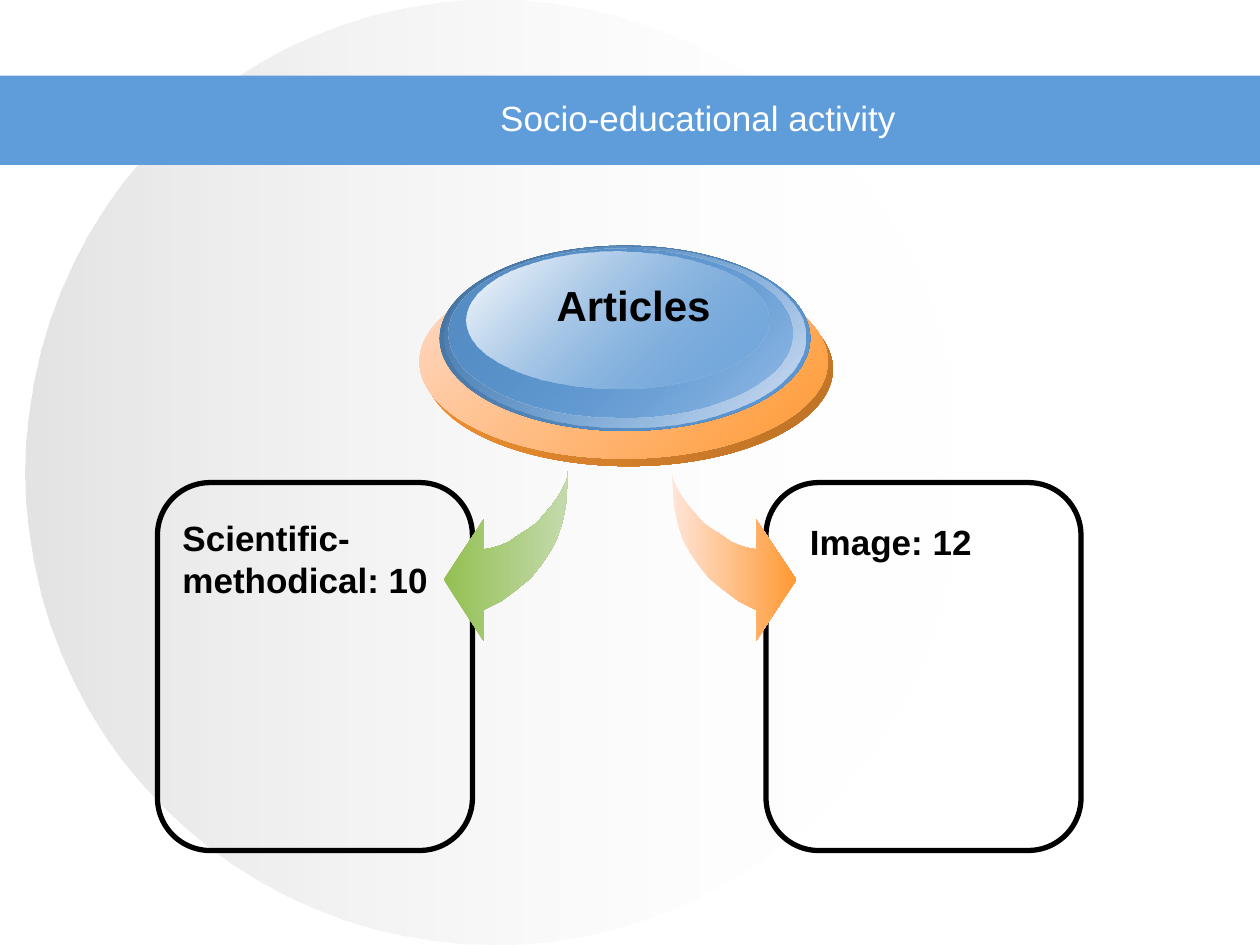
from lxml.etree import SubElement
from pptx import Presentation
from pptx.dml.color import RGBColor
from pptx.enum.shapes import MSO_SHAPE
from pptx.enum.text import MSO_ANCHOR, PP_ALIGN
from pptx.oxml.ns import qn
from pptx.util import Inches, Pt

BLUE, ORANGE, BLACK, WHITE = "5E9CDA", "FF9933", "000000", "FFFFFF"
HEADING = {"name": "Arial", "size": Pt(20), "bold": False}
LABEL = {**HEADING, "bold": True}
HUB_LABEL = {**LABEL, "size": Pt(24)}

ARROW_CURVE = [
    (0, 0), (0.01, 0.15), (0.02, 0.29), (0.05, 0.43), (0.09, 0.55),
    (0.15, 0.66), (0.22, 0.76), (0.3, 0.86), (0.41, 0.95), (0.53, 1.04),
    (0.67, 1.11), (0.67, 1.36), (0.99, 0.87), (0.67, 0.39), (0.67, 0.63),
    (0.61, 0.62), (0.54, 0.6), (0.47, 0.57), (0.4, 0.52), (0.32, 0.47),
    (0.25, 0.42), (0.19, 0.35), (0.13, 0.28), (0.08, 0.21), (0.04, 0.14),
    (0.01, 0.07),
]

HUB_RINGS = [
    ((3.37, 2.16, 3.24, 1.54), (ORANGE, 100), ("BA7025", 100)),
    ((3.33, 2.1, 3.24, 1.54), ("FFDAC7", 100), (ORANGE, 100)),
    ((3.49, 1.95, 2.94, 1.47), ("43709C", 100), (BLUE, 100)),
    ((3.53, 1.96, 2.86, 1.43), (BLUE, 0), ("D8E3F3", 100)),
    ((3.56, 1.97, 2.73, 1.34), ("558DC5", 100), (BLUE, 48)),
    ((3.7, 2, 2.4, 1.08), (WHITE, 100), (BLUE, 38)),
]


def color(value):
    """Turn a hex string into a colour."""
    return RGBColor.from_string(value)


def add_box(page, kind, box):
    """Add a preset shape without shadow or line."""
    shape = page.shapes.add_shape(kind, *map(Inches, box))
    shape.shadow.inherit = False
    shape.line.fill.background()
    return shape


def fill_gradient(shape, start, end, angle=0):
    """Fill with two (colour, opacity) stops at a clockwise angle."""
    shape.fill.gradient()
    shape.fill.gradient_angle = -angle % 360
    for stop, position, (value, opacity) in zip(shape.fill.gradient_stops, (0, 1), (start, end)):
        stop.position = position
        stop.color.rgb = color(value)
    tones = shape.fill._xPr.iter(qn("a:srgbClr"))
    for tone, (_, opacity) in zip(list(tones), (start, end)):
        if opacity < 100:
            SubElement(tone, qn("a:alpha"), val=str(opacity * 1000))


def add_text(page, box, text, style, tint=BLACK, align=PP_ALIGN.LEFT, anchor=MSO_ANCHOR.TOP):
    """Add one paragraph of wrapped text."""
    frame = page.shapes.add_textbox(*map(Inches, box)).text_frame
    frame.word_wrap = True
    frame.vertical_anchor = anchor
    para = frame.paragraphs[0]
    para.alignment = align
    span = para.add_run()
    span.text = text
    for name, value in style.items():
        setattr(span.font, name, value)
    span.font.color.rgb = color(tint)


def add_backdrop(page, box):
    """Add the large fading disc."""
    disc = add_box(page, MSO_SHAPE.OVAL, box)
    fill_gradient(disc, ("C0C0C0", 44), (WHITE, 0))


def add_title_band(page, box, text):
    """Add the title band and its heading."""
    band = add_box(page, MSO_SHAPE.RECTANGLE, box)
    band.fill.solid()
    band.fill.fore_color.rgb = color(BLUE)
    left, top, _, _ = box
    add_text(page, (left + 2.25, top + 0.07, 6.58, 0.53), text, HEADING, WHITE,
             PP_ALIGN.CENTER, MSO_ANCHOR.MIDDLE)


def add_panel(page, box, text, text_box):
    """Add an outlined rounded panel with its label."""
    panel = add_box(page, MSO_SHAPE.ROUNDED_RECTANGLE, box)
    panel.adjustments[0] = 0.167
    panel.fill.background()
    panel.line.color.rgb = color(BLACK)
    panel.line.width = Pt(3)
    add_text(page, text_box, text, LABEL)


def add_arrow(page, left, top, direction, start, end):
    """Add a curved arrow from its tail, right (1) or left (-1)."""
    points = [(Inches(left + direction * x), Inches(top + y)) for x, y in ARROW_CURVE]
    builder = page.shapes.build_freeform(*points[0])
    builder.add_line_segments(points[1:], close=True)
    arrow = builder.convert_to_shape()
    arrow.shadow.inherit = False
    arrow.line.fill.background()
    fill_gradient(arrow, (start, 100), (end, 100))


def add_hub(page, text, text_box):
    """Add the stacked ellipses with the topic."""
    for box, start, end in HUB_RINGS:
        fill_gradient(add_box(page, MSO_SHAPE.OVAL, box), start, end, 45)
    add_text(page, text_box, text, HUB_LABEL, align=PP_ALIGN.CENTER)


def main():
    """Build the slide and save it."""
    deck = Presentation()
    deck.slide_width, deck.slide_height = Inches(10), Inches(7.5)
    page = deck.slides.add_slide(deck.slide_layouts[6])
    add_backdrop(page, (0.2, 0, 7.44, 7.5))
    add_title_band(page, (0, 0.6, 10, 0.71), "Socio-educational activity")
    add_panel(page, (6.08, 3.83, 2.5, 2.92), "Image: 12", (6.33, 4.08, 2.23, 0.44))
    add_panel(page, (1.25, 3.83, 2.5, 2.92), "Scientific-methodical: 10",
              (1.35, 4.05, 2.4, 0.77))
    add_arrow(page, 4.51, 3.73, -1, "93C052", "C4DAAD")
    add_arrow(page, 5.33, 3.73, 1, "FFE5D9", ORANGE)
    add_hub(page, "Articles ", (4.06, 2.17, 2.03, 0.5))
    deck.save("out.pptx")


if __name__ == "__main__":
    main()
